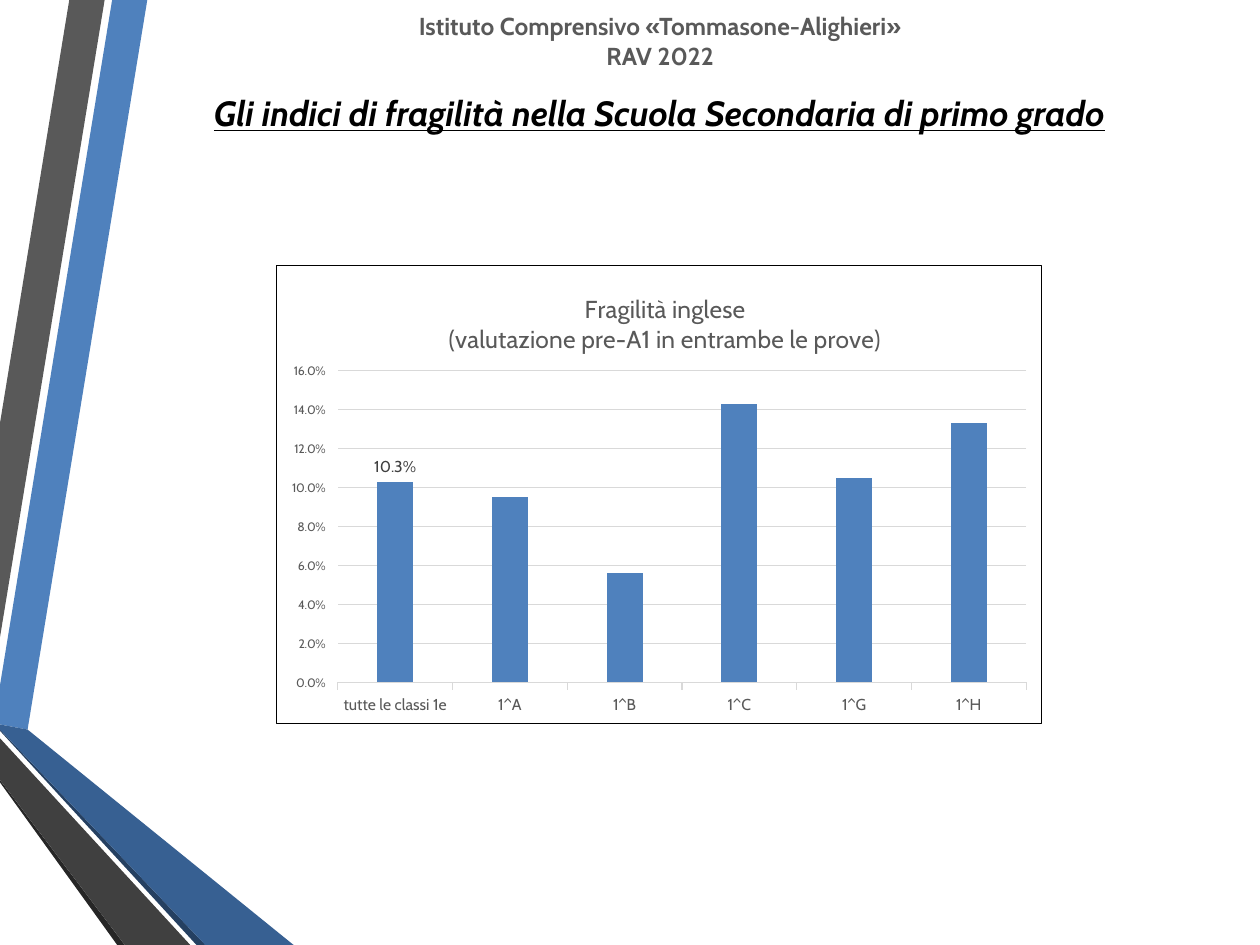
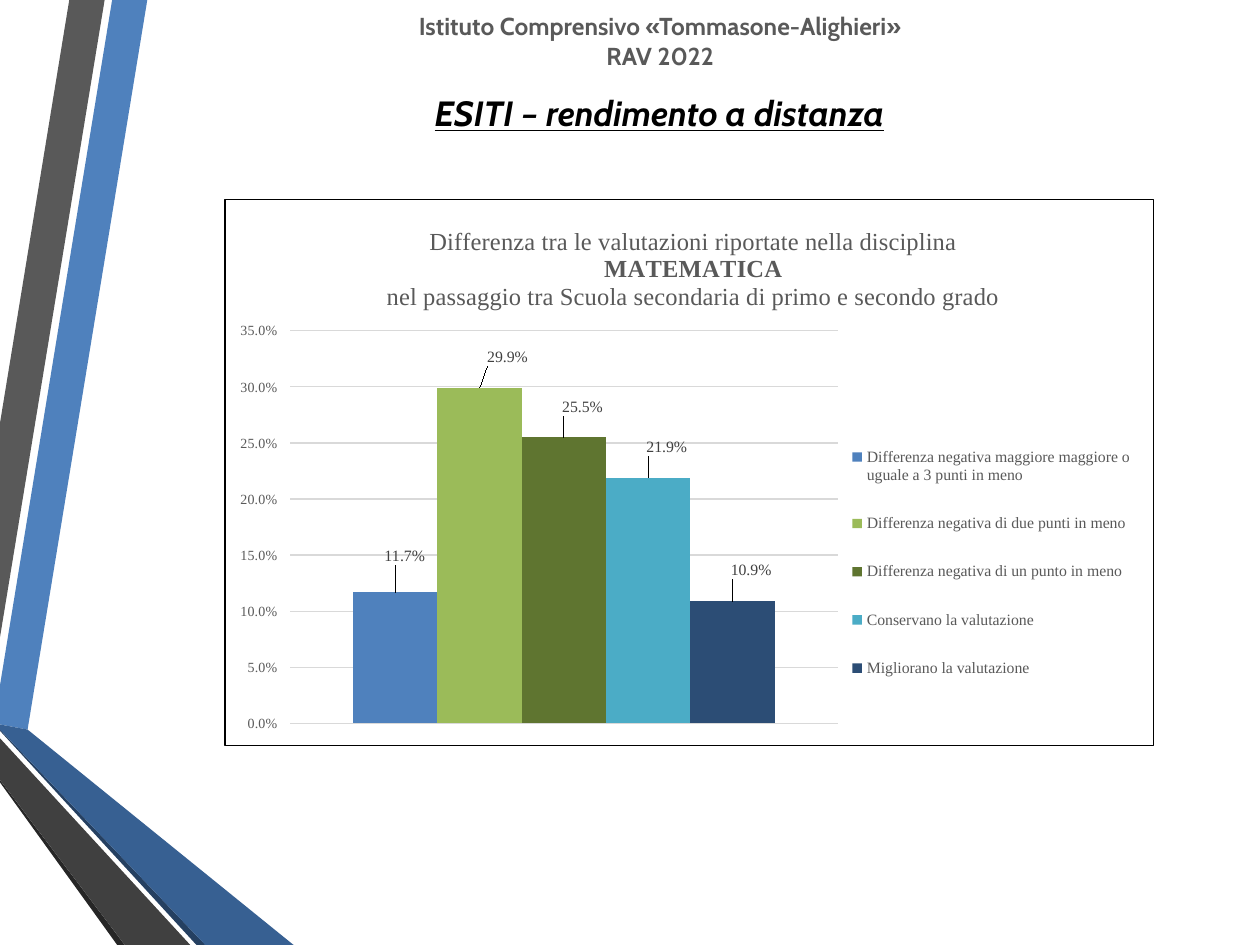
from dataclasses import dataclass

from lxml import etree
from pptx import Presentation
from pptx import util as u
from pptx.chart import data as chart_data
from pptx.dml.color import RGBColor
from pptx.enum import chart as charts, text
from pptx.oxml import parse_xml
from pptx.oxml.ns import nsdecls, qn


@dataclass(frozen=True)
class Theme:
    black: str = "000000"
    white: str = "FFFFFF"
    gray: str = "595959"
    label_gray: str = "404040"
    coal: str = "262626"
    grid: str = "D9D9D9"
    blue: str = "4F81BD"
    mid_blue: str = "376092"
    deep_blue: str = "254061"
    navy: str = "2C4D75"
    green: str = "9BBB59"
    olive: str = "5F7530"
    teal: str = "4BACC6"
    sans: str = "Cabin"
    serif: str = "Times New Roman"
    heading: int = 20
    school: int = 14
    chart_title: int = 14
    chart_base: int = 10
    chart_small: int = 9
    hairline: float = 0.75


THEME = Theme()
PERCENT = "0.0%"

RIBBONS = [
    (THEME.blue, [(0, 391.7), (0, 414), (15.8, 416.9), (84.2, 0), (64.1, 0)]),
    (THEME.gray, [(59.8, 0), (39.6, 0), (0, 241.9), (0, 364.3)]),
    (THEME.coal, [(0, 445.7), (0, 447.1), (67, 540), (71.3, 540)]),
    (THEME.deep_blue, [(0, 416.9), (0, 417.6), (112.3, 540), (117.4, 540)]),
    (THEME.mid_blue, [(0, 416.9), (117.4, 540), (167.8, 540), (15.8, 416.9), (0, 414)]),
    (THEME.label_gray, [(0, 445.7), (71.3, 540), (108.7, 540), (0, 421.9)]),
]


def style(target, values):
    for name, value in values.items():
        if name == "color":
            target.color.rgb = RGBColor.from_string(value)
        else:
            setattr(target, name, value)


def place(parent, after=None, target=None, edge=True, **fractions):
    for previous in parent.findall(qn("c:layout")):
        parent.remove(previous)
    layout = parse_xml(f"<c:layout {nsdecls('c')}><c:manualLayout/></c:layout>")
    settings = {"layoutTarget": target} if target else {}
    if edge:
        settings.update(xMode="edge", yMode="edge")
    settings.update(fractions)
    for name, value in settings.items():
        etree.SubElement(layout[0], qn(f"c:{name}")).set("val", str(value))
    if after:
        parent.find(qn(after)).addnext(layout)
    else:
        parent.insert(0, layout)


class Deck:
    def __init__(self, theme):
        self.theme = theme
        self.presentation = Presentation()
        self.presentation.slide_width = u.Pt(720)
        self.presentation.slide_height = u.Pt(540)
        self.slide = None

    def font(self, size, color, name=None, **extra):
        return dict(size=u.Pt(size), color=color, name=name or self.theme.sans, **extra)

    def new_slide(self, heading):
        layout = self.presentation.slide_layouts[6]
        self.slide = self.presentation.slides.add_slide(layout)
        for color, outline in RIBBONS:
            self.ribbon(color, outline)
        school = self.font(self.theme.school, self.theme.gray, bold=True)
        title = self.font(self.theme.heading, self.theme.black,
                          bold=True, italic=True, underline=True)
        self.centred_text((96.5, 2.9, 561.6, 41),
                          ["Istituto Comprensivo «Tommasone-Alighieri»", "RAV 2022"], school)
        self.centred_text((82, 49, 589.7, 31.7), [heading], title)

    def ribbon(self, color, outline):
        start, *corners = [(u.Pt(x), u.Pt(y)) for x, y in outline]
        builder = self.slide.shapes.build_freeform(*start, scale=1.0)
        builder.add_line_segments(corners, close=True)
        band = builder.convert_to_shape()
        band.shadow.inherit = False
        band.fill.solid()
        band.fill.fore_color.rgb = RGBColor.from_string(color)
        band.line.fill.background()

    def write_lines(self, frame, lines, font):
        for index, line in enumerate(lines):
            paragraph = frame.add_paragraph() if index else frame.paragraphs[0]
            paragraph.alignment = text.PP_ALIGN.CENTER
            run = paragraph.add_run()
            run.text = line
            style(run.font, font)

    def centred_text(self, box, lines, font):
        frame = self.slide.shapes.add_textbox(*map(u.Pt, box)).text_frame
        frame.word_wrap = True
        self.write_lines(frame, lines, font)

    def columns(self, box, categories, series, colors, title, title_at, plot_at,
                gap, top, step, axis_size, face, label_offsets):
        theme = self.theme
        table = chart_data.CategoryChartData(number_format=PERCENT)
        table.categories = categories
        for name, values in series:
            table.add_series(name, values)
        chart = self.slide.shapes.add_chart(
            charts.XL_CHART_TYPE.COLUMN_CLUSTERED, *map(u.Pt, box), table).chart
        style(chart.font, self.font(theme.chart_base, theme.black, face))
        chart.has_legend = False
        self.frame_chart(chart)

        chart.has_title = True
        title_frame = chart.chart_title.text_frame
        self.write_lines(title_frame, title,
                         self.font(theme.chart_title, theme.gray, face, bold=False))
        place(chart.element.find(".//" + qn("c:title")), "c:tx", **title_at)
        place(chart.element.find(".//" + qn("c:plotArea")), target="inner", **plot_at)

        values_axis = chart.value_axis
        style(values_axis, dict(minimum_scale=0, maximum_scale=top, major_unit=step,
                                has_major_gridlines=True))
        style(values_axis.tick_labels, dict(number_format=PERCENT,
                                            number_format_is_linked=False))
        style(values_axis.tick_labels.font, self.font(axis_size, theme.gray, face))
        values_axis.format.line.fill.background()
        rule = dict(color=theme.grid, width=u.Pt(theme.hairline))
        style(values_axis.major_gridlines.format.line, rule)
        style(chart.category_axis.format.line, rule)
        style(chart.category_axis.tick_labels.font,
              self.font(theme.chart_small, theme.gray, face))

        plot = chart.plots[0]
        style(plot, dict(gap_width=gap, vary_by_categories=False))
        for bars, color in zip(plot.series, colors):
            bars.format.fill.solid()
            bars.format.fill.fore_color.rgb = RGBColor.from_string(color)
            style(bars.data_labels, dict(show_value=False, number_format=PERCENT,
                                         number_format_is_linked=False))
            label = bars.points[0].data_label
            label.position = charts.XL_LABEL_POSITION.OUTSIDE_END
            style(label.font, self.font(theme.chart_small, theme.label_gray, face))
        for label, (x, y) in zip(chart.element.iter(qn("c:dLbl")), label_offsets):
            place(label, "c:idx", edge=False, x=x, y=y)
        return chart

    def frame_chart(self, chart):
        theme = self.theme
        border = parse_xml(
            f"<c:spPr {nsdecls('c', 'a')}>"
            f'<a:solidFill><a:srgbClr val="{theme.white}"/></a:solidFill>'
            f'<a:ln w="{u.Pt(theme.hairline)}"><a:solidFill>'
            f'<a:srgbClr val="{theme.black}"/></a:solidFill></a:ln></c:spPr>')
        chart.element.find(qn("c:chart")).addnext(border)

    def right_legend(self, chart, face, **area):
        chart.has_legend = True
        style(chart.legend, dict(position=charts.XL_LEGEND_POSITION.RIGHT,
                                 include_in_layout=False))
        style(chart.legend.font, self.font(self.theme.chart_small, self.theme.gray, face))
        place(chart.element.find(".//" + qn("c:legend")), "c:legendPos", **area)


def english_slide(deck):
    deck.new_slide("Gli indici di fragilità nella Scuola Secondaria di primo grado")
    deck.columns(
        box=(157.7, 151.2, 437.8, 262.8),
        categories=["tutte le classi 1e", "1^A", "1^B", "1^C", "1^G", "1^H"],
        series=[("Series 1", [0.103, 0.095, 0.056, 0.143, 0.105, 0.133])],
        colors=[THEME.blue],
        title=["Fragilità inglese", "(valutazione pre-A1 in entrambe le prove)"],
        title_at=dict(x=0.22, y=0.05),
        plot_at=dict(x=0.08, y=0.23, w=0.9, h=0.68),
        gap=219, top=0.16, step=0.02, axis_size=7, face=THEME.sans,
        label_offsets=[(0, 0)])


def maths_slide(deck):
    deck.new_slide("ESITI – rendimento a distanza")
    outcomes = [
        ("Differenza negativa maggiore maggiore o uguale a 3 punti in meno", [0.117]),
        ("Differenza negativa di due punti in meno", [0.299]),
        ("Differenza negativa di un punto in meno", [0.255]),
        ("Conservano la valutazione", [0.219]),
        ("Migliorano la valutazione", [0.109]),
    ]
    chart = deck.columns(
        box=(128.2, 113.8, 531.4, 312.5),
        categories=["1"],
        series=outcomes,
        colors=[THEME.blue, THEME.green, THEME.olive, THEME.teal, THEME.navy],
        title=["Differenza tra le valutazioni riportate nella disciplina", "MATEMATICA",
               "nel passaggio tra Scuola secondaria di primo e secondo grado"],
        title_at=dict(x=0.17, y=0.04),
        plot_at=dict(x=0.07, y=0.24, w=0.59, h=0.72),
        gap=150, top=0.35, step=0.05, axis_size=8, face=THEME.serif,
        label_offsets=[(0.01, -0.04), (0.03, -0.03), (0.02, -0.03),
                       (0.02, -0.03), (0.02, -0.03)])
    chart.chart_title.text_frame.paragraphs[1].runs[0].font.bold = True
    chart.category_axis.visible = False
    deck.right_legend(chart, THEME.serif, x=0.67, y=0.4, w=0.31, h=0.53)


def main():
    deck = Deck(THEME)
    english_slide(deck)
    maths_slide(deck)
    deck.presentation.save("out.pptx")


if __name__ == "__main__":
    main()
